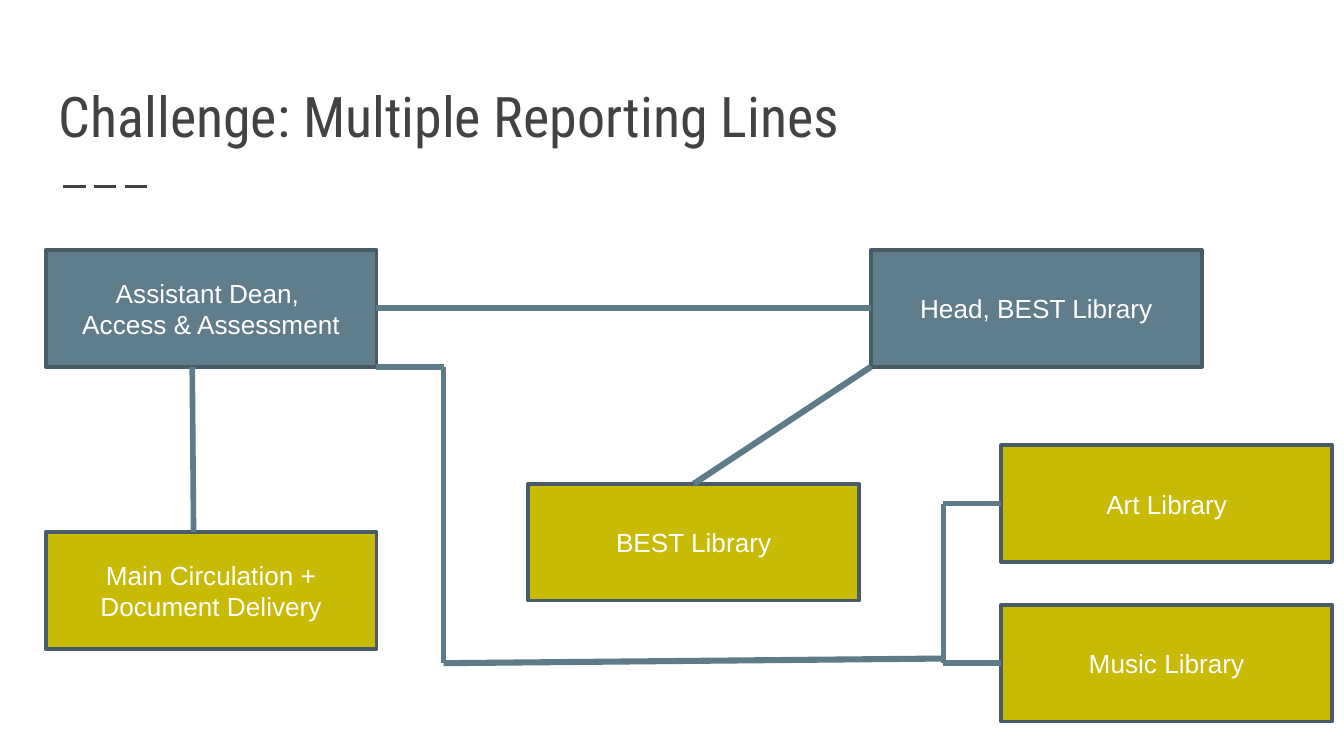
from lxml.etree import SubElement
from pptx import Presentation
from pptx.dml.color import RGBColor
from pptx.enum.dml import MSO_LINE
from pptx.enum.shapes import MSO_CONNECTOR, MSO_SHAPE
from pptx.enum.text import MSO_ANCHOR, PP_ALIGN
from pptx.oxml.ns import qn
from pptx.util import Pt

COLORS = {
    "text": "424242", "label": "FFFFFF", "border": "475C67", "link": "5D7B89",
    "manager": "607D8B", "unit": "C9BA06",
}
TITLE = "Challenge: Multiple Reporting Lines"
BOX_W, BOX_H = 177.2, 62.6
TOP, RIGHT_COL = 133.9, 536.4

# key: (lines of the label, role, left, top)
POSITIONS = {
    "dean": (["Assistant Dean, ", "Access & Assessment"], "manager", 24.5, TOP),
    "head": (["Head, BEST Library"], "manager", 466.6, TOP),
    "main": (["Main Circulation + Document Delivery"], "unit", 24.5, 285.1),
    "best": (["BEST Library"], "unit", 283, 259.2),
    "music": (["Music Library"], "unit", RIGHT_COL, 324),
    "art": (["Art Library"], "unit", RIGHT_COL, 238.5),
}
TOP_SIDE, LEFT_SIDE, RIGHT_SIDE = 0, 1, 3

TRUNK_X, BRANCH_X = 237.6, 505.4
MANAGER_BOTTOM = TOP + BOX_H
DEAN_RIGHT = POSITIONS["dean"][2] + BOX_W
HEAD_LEFT = POSITIONS["head"][2]
art_y, music_y, manager_y, best_y = (
    POSITIONS[key][3] + BOX_H / 2 for key in ("art", "music", "head", "best"))
BEST_X = POSITIONS["best"][2] + BOX_W / 2

# start, end, width, joined start (box, side), joined end (box, side)
LINKS = [
    ((TRUNK_X, MANAGER_BOTTOM), (TRUNK_X, music_y), 3, None, None),
    ((103, MANAGER_BOTTOM), (103.7, POSITIONS["main"][3]), 3, None, None),
    ((TRUNK_X, MANAGER_BOTTOM), (DEAN_RIGHT, MANAGER_BOTTOM), 3.25, None, None),
    ((BRANCH_X, art_y), (RIGHT_COL, art_y), 3, None, ("art", LEFT_SIDE)),
    ((BRANCH_X, music_y), (RIGHT_COL, music_y), 3, None, ("music", LEFT_SIDE)),
    ((DEAN_RIGHT, manager_y), (HEAD_LEFT, manager_y), 3.25,
     ("dean", RIGHT_SIDE), ("head", LEFT_SIDE)),
    ((BRANCH_X, art_y), (BRANCH_X, music_y), 3, None, None),
    ((HEAD_LEFT, MANAGER_BOTTOM), (BEST_X, POSITIONS["best"][3]), 3.25,
     None, ("best", TOP_SIDE)),
    ((BRANCH_X, 352.8), (TRUNK_X, music_y), 3.25, None, None),
]


def color(name):
    return RGBColor.from_string(COLORS[name])


def add_run(paragraph, text, font, size, color_name):
    run = paragraph.add_run()
    run.text = text
    run.font.name = font
    run.font.size = Pt(size)
    run.font.color.rgb = color(color_name)


def add_line(slide, start, end, width, color_name):
    line = slide.shapes.add_connector(
        MSO_CONNECTOR.STRAIGHT, *(Pt(v) for v in (*start, *end)))
    line.line.width = Pt(width)
    line.line.color.rgb = color(color_name)
    SubElement(line._element.spPr, qn("a:effectLst"))
    return line


def add_title(slide):
    underline = add_line(slide, (33.8, 100.1), (82.1, 100.1), 1.5, "text")
    underline.line.dash_style = MSO_LINE.LONG_DASH
    title = slide.shapes.add_textbox(Pt(24.5), Pt(29.5), Pt(671), Pt(57.6))
    frame = title.text_frame
    frame.word_wrap = True
    frame.vertical_anchor = MSO_ANCHOR.BOTTOM
    frame.margin_top = frame.margin_bottom = Pt(7.2)
    add_run(frame.paragraphs[0], TITLE, "Roboto Condensed", 30, "text")


def add_position(slide, lines, role, left, top):
    box = slide.shapes.add_shape(
        MSO_SHAPE.RECTANGLE, Pt(left), Pt(top), Pt(BOX_W), Pt(BOX_H))
    box.shadow.inherit = False
    box.fill.solid()
    box.fill.fore_color.rgb = color(role)
    box.line.color.rgb = color("border")
    box.line.width = Pt(2)
    frame = box.text_frame
    frame.word_wrap = True
    frame.vertical_anchor = MSO_ANCHOR.MIDDLE
    label = frame.paragraphs[0]
    label.alignment = PP_ALIGN.CENTER
    for index, line in enumerate(lines):
        if index:
            label.add_line_break()
        add_run(label, line, "Arial", 14, "label")
    return box


def main():
    deck = Presentation()
    deck.slide_width, deck.slide_height = Pt(720), Pt(405)
    slide = deck.slides.add_slide(deck.slide_layouts[6])
    add_title(slide)
    boxes = {key: add_position(slide, *position)
             for key, position in POSITIONS.items()}
    for start, end, width, start_joint, end_joint in LINKS:
        link = add_line(slide, start, end, width, "link")
        if start_joint:
            link.begin_connect(boxes[start_joint[0]], start_joint[1])
        if end_joint:
            link.end_connect(boxes[end_joint[0]], end_joint[1])
    deck.save("out.pptx")


if __name__ == "__main__":
    main()
